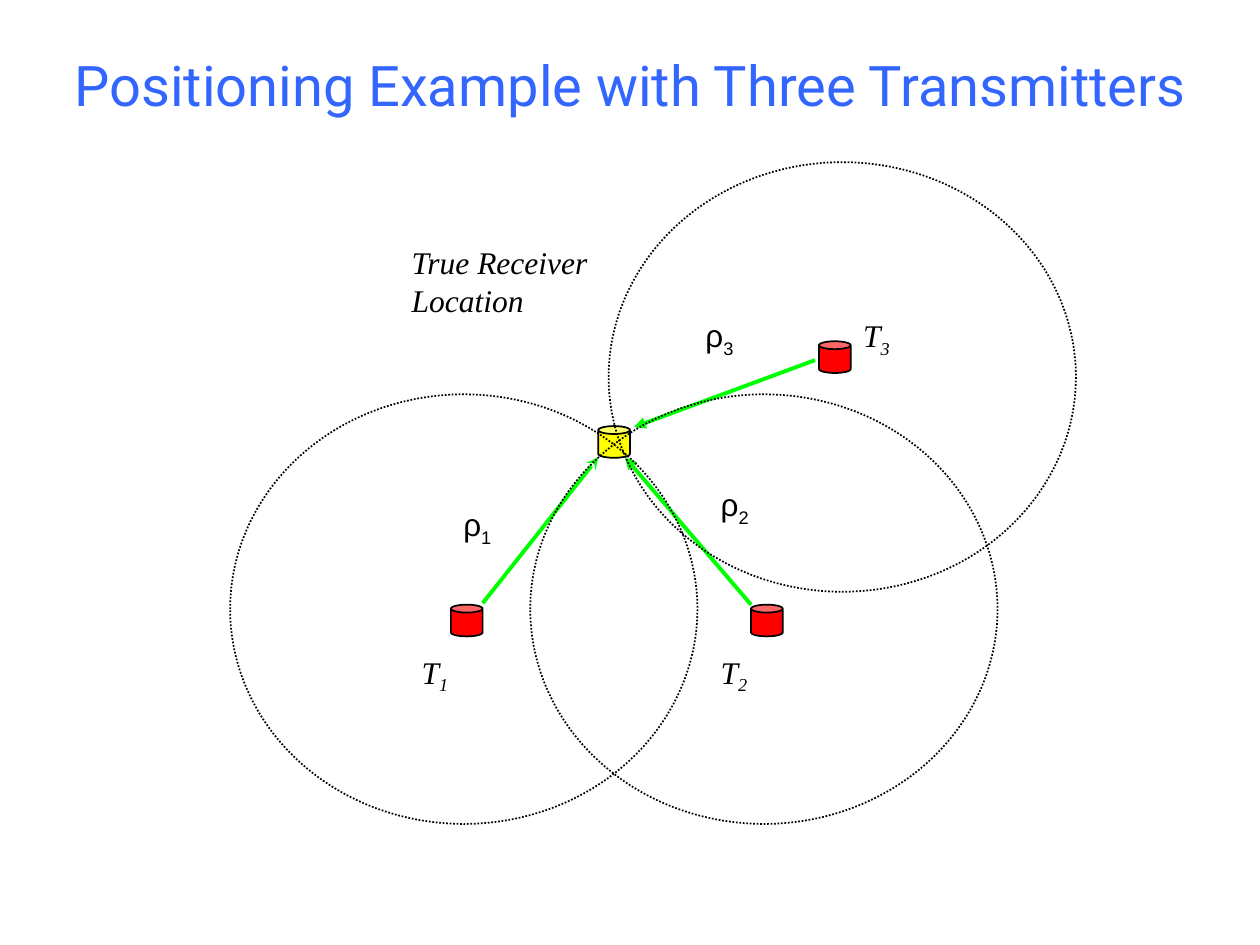
from lxml import etree
from pptx import Presentation
from pptx import util as u
from pptx.dml.color import RGBColor
from pptx.enum import dml, shapes, text
from pptx.oxml.ns import qn

CAN = 0.64
CIRCLE = (9.42, 8.66)
# Can position; the other places are offsets from it, all in cm
TRANSMITTERS = [
    dict(n="1", at=(9.09, 12.19), circle=(-4.45, -4.24), label=(-0.84, 0.84),
         rho=(0, -2.13), start=(0.64, -0.03), end=(2.97, -2.97), head="stealth"),
    dict(n="2", at=(15.14, 12.19), circle=(-4.45, -4.24), label=(-0.86, 0.84),
         rho=(-0.86, -2.54), start=(0, 0), end=(-2.54, -2.97), head="triangle"),
    dict(n="3", at=(16.51, 6.88), circle=(-4.24, -3.61), label=(0.64, -0.64),
         rho=(-2.54, -0.64), start=(-0.08, 0.38), end=(-3.73, 1.73), head="triangle"),
]


def color(value):
    return RGBColor.from_string(value)


def offset(at, delta):
    return at[0] + delta[0], at[1] + delta[1]


def add_outlined(slide, kind, at, size, fill=None):
    sp = slide.shapes.add_shape(kind, *map(u.Cm, (*at, *size)))
    sp.shadow.inherit = False
    if fill:
        sp.fill.solid()
        sp.fill.fore_color.rgb = color(fill)
    else:
        sp.fill.background()
    sp.line.color.rgb = color("000000")
    sp.line.width = u.Pt(1)
    return sp


def add_can(slide, at, fill):
    add_outlined(slide, shapes.MSO_SHAPE.CAN, at, (CAN, CAN), fill)


def add_label(slide, at, size, words, font, italic=False, subscript=None):
    tf = slide.shapes.add_textbox(*map(u.Cm, (*at, *size))).text_frame
    tf.word_wrap = True
    p = tf.paragraphs[0]
    p.font.name = font
    p.font.size = u.Pt(18)
    p.font.italic = italic
    p.font.color.rgb = color("000000")
    p.add_run().text = words
    if subscript:
        r = p.add_run()
        r.text = subscript
        r.font._element.set("baseline", "-25000")


def add_range_arrow(slide, at, start, end, head):
    ends = (*offset(at, start), *offset(at, end))
    line = slide.shapes.add_connector(shapes.MSO_CONNECTOR.STRAIGHT, *map(u.Cm, ends))
    line.line.color.rgb = color("00FF00")
    line.line.width = u.Pt(2.25)
    etree.SubElement(line.line._get_or_add_ln(), qn("a:tailEnd"), type=head)
    etree.SubElement(line._element.spPr, qn("a:effectLst"))


def add_transmitter(slide, at, n, circle, label, rho):
    """Range circle, can, name and range symbol, placed from the can."""
    ring = add_outlined(slide, shapes.MSO_SHAPE.OVAL, offset(at, circle), CIRCLE)
    ring.line.dash_style = dml.MSO_LINE.ROUND_DOT
    add_can(slide, at, "FF0000")
    add_label(slide, offset(at, label), (2.54, 1.27), "T", "Times New Roman", True, n)
    add_label(slide, offset(at, rho), (1.48, 1.27), "ρ", "Arial", subscript=n)


def add_receiver(slide, at):
    add_can(slide, at, "FFFF00")
    add_label(slide, offset(at, (-4.01, -3.81)), (4.88, 3.33),
              "True Receiver Location", "Times New Roman", True)


def set_title(slide, words):
    title = slide.shapes.title
    title.left, title.top, title.width, title.height = map(u.Cm, (1.09, 0.64, 23.24, 2.11))
    tf = title.text_frame
    tf.text = words
    tf.auto_size = text.MSO_AUTO_SIZE.NONE
    tf.vertical_anchor = text.MSO_ANCHOR.MIDDLE
    p = tf.paragraphs[0]
    p.alignment = text.PP_ALIGN.CENTER
    p.font.name = "Roboto"
    p.font.size = u.Pt(32)
    p.font.color.rgb = color("3366FF")


def main():
    prs = Presentation()
    prs.slide_width, prs.slide_height = u.Cm(25.4), u.Cm(19.05)
    slide = prs.slides.add_slide(prs.slide_layouts[5])
    set_title(slide, "Positioning Example with Three Transmitters")
    for t in TRANSMITTERS:
        add_range_arrow(slide, t["at"], t["start"], t["end"], t["head"])
    add_receiver(slide, (12.06, 8.59))
    for t in TRANSMITTERS:
        add_transmitter(slide, t["at"], t["n"], t["circle"], t["label"], t["rho"])
    prs.save("out.pptx")


if __name__ == "__main__":
    main()
